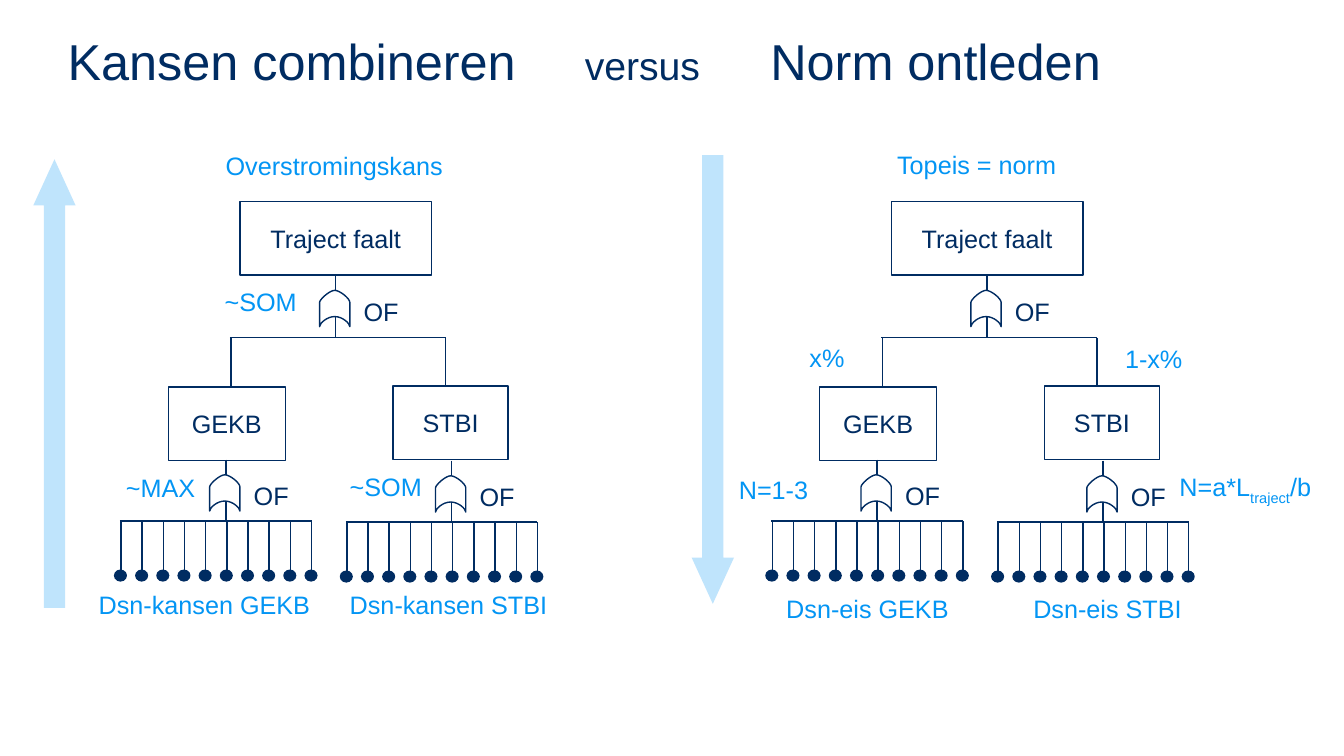
from lxml import etree
from pptx import Presentation
from pptx.dml.color import RGBColor
from pptx.enum import shapes, text
from pptx.oxml.ns import qn
from pptx.util import Inches, Pt

COLORS = {"navy": "002C62", "blue": "0395F4", "white": "FFFFFF"}
NAVY, BLUE, WHITE = (RGBColor.from_string(value) for value in COLORS.values())

deck = Presentation()
deck.slide_width, deck.slide_height = Inches(13.33), Inches(7.5)
slide = deck.slides.add_slide(deck.slide_layouts[6])
parts = slide.shapes


def draw_line(x1, y1, x2, y2):
    branch = parts.add_connector(shapes.MSO_CONNECTOR.STRAIGHT,
                                 Inches(x1), Inches(y1), Inches(x2), Inches(y2))
    branch.line.color.rgb = NAVY
    branch.line.width = Pt(1)
    etree.SubElement(branch._element.spPr, qn("a:effectLst"))


def write(holder, runs, color, centred=False):
    frame = holder.text_frame
    frame.word_wrap = True
    paragraph = frame.paragraphs[0]
    paragraph.alignment = text.PP_ALIGN.LEFT
    if centred:
        frame.vertical_anchor = text.MSO_ANCHOR.MIDDLE
        paragraph.alignment = text.PP_ALIGN.CENTER
    for words, size, baseline in runs:
        run = paragraph.add_run()
        run.text = words
        run.font.name = "Arial"
        run.font.size = Pt(size)
        run.font.color.rgb = color
        if baseline:
            run.font._element.set("baseline", str(baseline))


title = parts.add_textbox(Inches(0.67), Inches(0.3), Inches(12), Inches(1.25))
frame = title.text_frame
frame.margin_left = frame.margin_right = frame.margin_top = frame.margin_bottom = 0
tabs = etree.SubElement(frame.paragraphs[0]._p.get_or_add_pPr(), qn("a:tabLst"))
for stop in (5.13, 6.97):
    etree.SubElement(tabs, qn("a:tab"), pos=str(Inches(stop)), algn="l")
write(title, [("Kansen combineren\t", 36, 0), ("versus", 28, 0),
              ("\tNorm ontleden", 36, 0)], NAVY)

TREE_SHIFT = 6.46
EVENTS = [("Traject faalt", 2.38, 2, 1.9), ("GEKB", 1.67, 3.84, 1.16),
          ("STBI", 3.9, 3.83, 1.14)]
GATES = [(3.33, 2.73, False), (2.24, 4.56, True), (4.48, 4.57, True)]
BRANCHES = [(2.29, 3.35, 2.29, 3.83), (4.42, 3.35, 4.42, 3.83),
            (2.28, 3.35, 4.42, 3.35)]
GATE_LENGTH, GATE_WIDTH = 0.36, 0.3
GATE_PATH = [
    ("moveTo", [(0.24, 0)]),
    ("lnTo", [(0, 0)]),
    ("cubicBezTo", [(0.03, 0), (0.1, 0.07), (0.1, 0.15)]),
    ("cubicBezTo", [(0.1, 0.23), (0.03, 0.3), (0, 0.3)]),
    ("lnTo", [(0.24, 0.3)]),
    ("cubicBezTo", [(0.28, 0.3), (0.36, 0.2), (0.36, 0.15)]),
    ("cubicBezTo", [(0.36, 0.1), (0.27, 0), (0.24, 0)]),
    ("close", []),
]
SECTIONS, SECTION_GAP = 10, 0.21

for shift in (0, TREE_SHIFT):
    for x1, y1, x2, y2 in BRANCHES:
        draw_line(x1 + shift, y1, x2 + shift, y2)

    for name, left, top, width in EVENTS:
        event = parts.add_shape(shapes.MSO_SHAPE.RECTANGLE, Inches(left + shift),
                                Inches(top), Inches(width), Inches(0.73))
        event.shadow.inherit = False
        event.fill.background()
        event.line.color.rgb = NAVY
        event.line.width = Pt(1)
        write(event, [(name, 18, 0)], NAVY, centred=True)

    for stem, top, has_sections in GATES:
        stem += shift
        bar = top + 0.61
        draw_line(stem, top, stem, bar)

        left, right = Inches(stem - 0.19), Inches(stem - 0.19 + GATE_LENGTH)
        upper, lower = Inches(top + 0.18), Inches(top + 0.18 + GATE_WIDTH)
        builder = parts.build_freeform(left, upper)
        builder.add_line_segments([(right, upper), (right, lower), (left, lower)])
        gate = builder.convert_to_shape()
        curve = gate._element.spPr.find(".//" + qn("a:path"))
        for corner in list(curve):
            curve.remove(corner)
        for command, points in GATE_PATH:
            segment = etree.SubElement(curve, qn("a:" + command))
            for x, y in points:
                etree.SubElement(segment, qn("a:pt"), x=str(Inches(x)), y=str(Inches(y)))
        gate.rotation = 270
        gate.shadow.inherit = False
        gate.fill.solid()
        gate.fill.fore_color.rgb = WHITE
        gate.line.color.rgb = NAVY
        gate.line.width = Pt(1)

        gate_name = parts.add_textbox(Inches(stem - 0.5), Inches(top - 0.01),
                                      Inches(1.9), Inches(0.73))
        write(gate_name, [("OF", 18, 0)], NAVY, centred=True)

        if has_sections:
            first = stem - 1.04
            draw_line(first - 0.01, bar, first + SECTION_GAP * (SECTIONS - 1), bar)
            for index in range(SECTIONS):
                x = first + index * SECTION_GAP
                draw_line(x, bar, x, bar + 0.48)
                section = parts.add_shape(shapes.MSO_SHAPE.OVAL, Inches(x - 0.07),
                                          Inches(bar + 0.48), Inches(0.13), Inches(0.12))
                section.shadow.inherit = False
                section.fill.solid()
                section.fill.fore_color.rgb = NAVY
                section.line.fill.background()

for left, top, rotation in [(0.33, 1.58, 180), (6.86, 1.54, 0)]:
    direction = parts.add_shape(shapes.MSO_SHAPE.DOWN_ARROW, Inches(left), Inches(top),
                                Inches(0.42), Inches(4.45))
    direction.adjustments[0] = 0.5
    direction.adjustments[1] = 1.09
    direction.rotation = rotation
    direction.shadow.inherit = False
    direction.fill.solid()
    direction.fill.fore_color.rgb = BLUE
    tint = direction._element.spPr.find(qn("a:solidFill"))[0]
    etree.SubElement(tint, qn("a:alpha"), val="25000")
    direction.line.fill.background()

LABELS = [
    ("Overstromingskans", 2.14, 1.44, 2.77),
    ("~SOM", 2.13, 2.79, 2.04),
    ("~MAX", 1.15, 4.64, 2.04),
    ("~SOM", 3.37, 4.63, 2.04),
    ("Dsn-kansen GEKB", 0.88, 5.8, 2.32),
    ("Dsn-kansen STBI", 3.37, 5.8, 2.32),
    ("Topeis = norm", 8.8, 1.43, 2.04),
    ("x%", 7.93, 3.35, 2.04),
    ("1-x%", 11.06, 3.36, 2.04),
    ("N=1-3", 7.23, 4.66, 2.04),
    ("Dsn-eis GEKB", 7.7, 5.84, 2.04),
    ("Dsn-eis STBI", 10.15, 5.84, 2.04),
]
for words, left, top, width in LABELS:
    label = parts.add_textbox(Inches(left), Inches(top), Inches(width), Inches(0.4))
    write(label, [(words, 18, 0)], BLUE)

length_effect = parts.add_textbox(Inches(11.6), Inches(4.63), Inches(1.73), Inches(0.4))
write(length_effect, [("N=a*L", 18, 0), ("traject", 18, -25000), ("/b", 18, 0)], BLUE)

deck.save("out.pptx")
